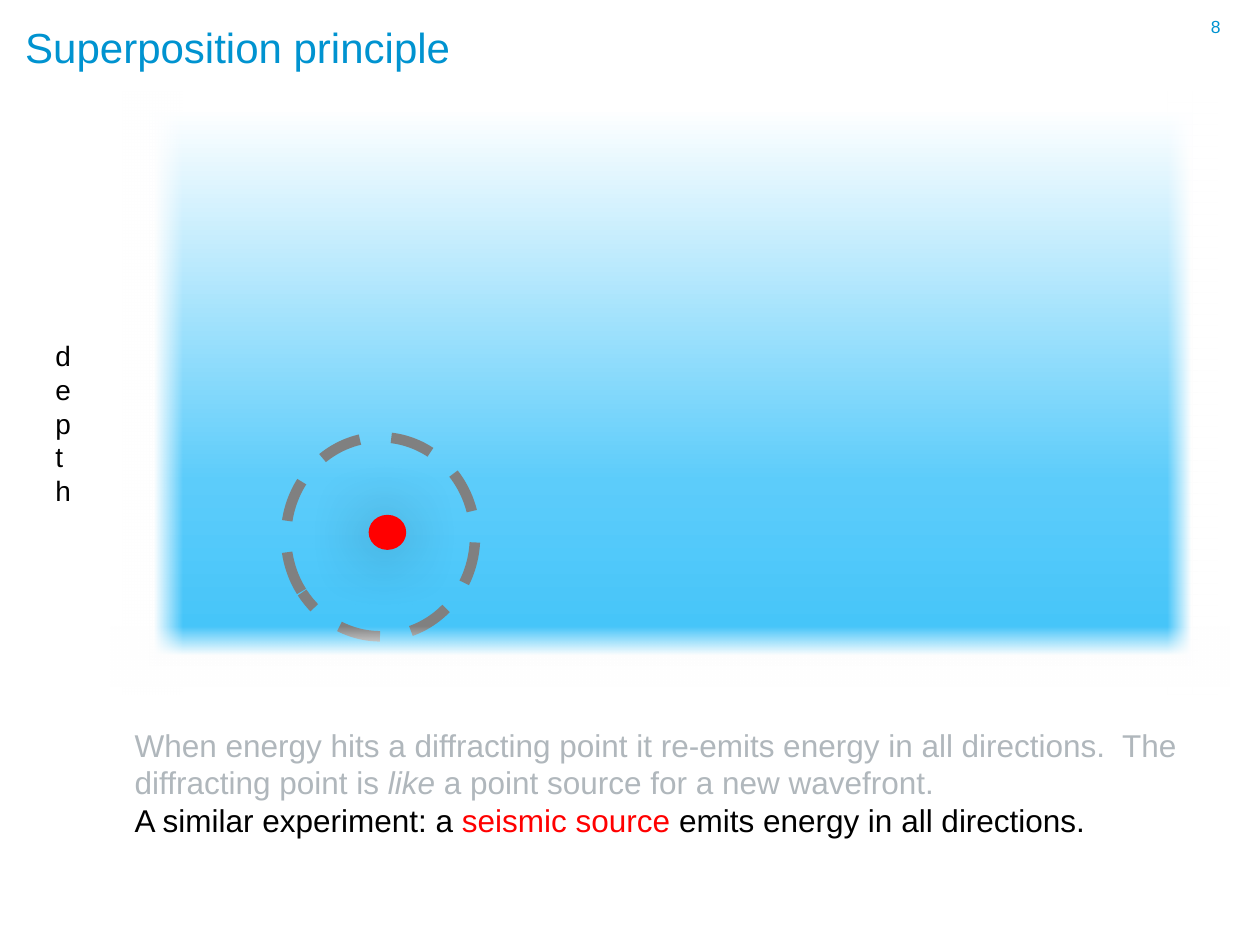
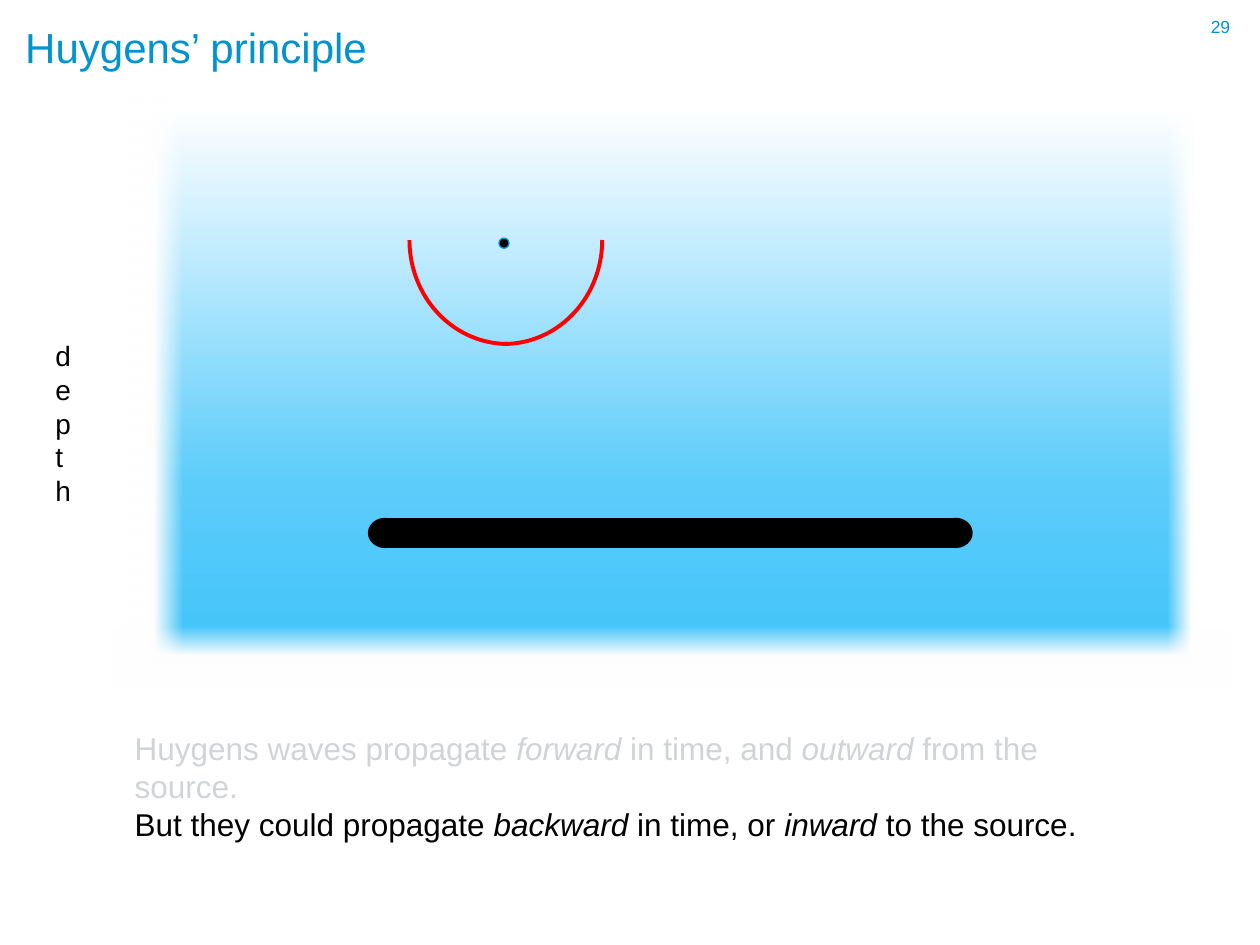
import dataclasses

import lxml.etree
import pptx
import pptx.dml.color
import pptx.enum.dml
import pptx.enum.shapes
import pptx.enum.text
import pptx.oxml.ns
import pptx.util

SHAPE = pptx.enum.shapes.MSO_SHAPE
ANCHOR = pptx.enum.text.MSO_ANCHOR
DASH = pptx.enum.dml.MSO_LINE.DASH
qn = pptx.oxml.ns.qn


@dataclasses.dataclass(frozen=True)
class Theme:
    font: str = "Arial"
    accent: str = "0093D0"
    ink: str = "000000"
    source: str = "FF0000"
    wavefront: str = "808080"
    past: str = "B0B7BC"
    faint_past: str = "D0D4D7"
    # Stops are (position in percent, colour, opacity in percent).
    water: tuple = ((0, "40C3F9", 100), (33, "5CCCFA", 100), (100, "FFFFFF", 100))
    fade: tuple = ((0, "FFFFFF", 0), (48, "FFFFFF", 100))
    title_size: int = 24
    caption_size: int = 18
    axis_size: int = 16
    number_size: int = 10


def apply_format(target, values):
    for name, value in values.items():
        setattr(target, name, value)


class Deck:
    """Draws on a grid of 100 columns by 75 rows."""

    COLUMNS, ROWS = 100, 75

    def __init__(self, theme):
        self.theme = theme
        self.file = pptx.Presentation()
        self.file.slide_width = pptx.util.Inches(10)
        self.file.slide_height = pptx.util.Inches(7.5)
        self.slide = None

    def x(self, columns):
        return round(self.file.slide_width * columns / self.COLUMNS)

    def y(self, rows):
        return round(self.file.slide_height * rows / self.ROWS)

    def box(self, left, top, width, height):
        return self.x(left), self.y(top), self.x(width), self.y(height)

    def fill_frame(self, frame, paragraphs, size, margins=None, spacing=None,
                   anchor=ANCHOR.TOP):
        """Fill a frame with paragraphs of (text, colour, italic) runs."""
        apply_format(frame, {"word_wrap": True, "vertical_anchor": anchor,
                             "auto_size": pptx.enum.text.MSO_AUTO_SIZE.NONE})
        if margins is not None:
            sides = ("left", "top", "right", "bottom")
            apply_format(frame, {f"margin_{side}": margins for side in sides})
        for index, runs in enumerate(paragraphs):
            paragraph = frame.add_paragraph() if index else frame.paragraphs[0]
            apply_format(paragraph, {"alignment": pptx.enum.text.PP_ALIGN.LEFT,
                                     "line_spacing": spacing})
            for text, colour, italic in runs:
                run = paragraph.add_run()
                run.text = text
                apply_format(run.font, {"name": self.theme.font, "italic": italic,
                                        "size": pptx.util.Pt(size)})
                run.font.color.rgb = pptx.dml.color.RGBColor.from_string(colour)

    def text(self, place, paragraphs, size, **layout):
        label = self.slide.shapes.add_textbox(*self.box(*place))
        self.fill_frame(label.text_frame, paragraphs, size, **layout)
        return label

    def start(self, title, number):
        """Add a slide with its title and page number."""
        theme = self.theme
        self.slide = self.file.slides.add_slide(self.file.slide_layouts[5])
        heading = self.slide.shapes.title
        left, top, width, height = self.box(2, 1.9, 87.3, 4.1)
        apply_format(heading, {"left": left, "top": top,
                               "width": width, "height": height})
        self.fill_frame(heading.text_frame, [[(title, theme.accent, False)]],
                        theme.title_size, margins=0, spacing=0.9,
                        anchor=ANCHOR.MIDDLE)
        self.text((96.1, 1.3, 3, 2.6), [[(str(number), theme.accent, False)]],
                  theme.number_size, margins=0, spacing=pptx.util.Pt(12))

    def outline(self, line, colour, width, dash=None):
        line.color.rgb = pptx.dml.color.RGBColor.from_string(colour)
        apply_format(line, {"width": pptx.util.Pt(width), "dash_style": dash})

    def shape(self, preset, place, fill=None, line=None):
        part = self.slide.shapes.add_shape(preset, *self.box(*place))
        part.shadow.inherit = False
        if fill:
            part.fill.solid()
            part.fill.fore_color.rgb = pptx.dml.color.RGBColor.from_string(fill)
        else:
            part.fill.background()
        if line:
            self.outline(part.line, *line)
        else:
            part.line.fill.background()
        return part

    def gradient(self, place, stops, angle):
        """Draw a rectangle whose gradient runs clockwise from the right."""
        band = self.shape(SHAPE.RECTANGLE, place)
        band.fill.gradient()
        gradient = band._element.spPr.find(qn("a:gradFill"))
        stop_list = gradient.find(qn("a:gsLst"))
        for stop in list(stop_list):
            stop_list.remove(stop)
        for position, colour, opacity in stops:
            stop = lxml.etree.SubElement(stop_list, qn("a:gs"), pos=str(position * 1000))
            tint = lxml.etree.SubElement(stop, qn("a:srgbClr"), val=colour)
            if opacity < 100:
                lxml.etree.SubElement(tint, qn("a:alpha"), val=str(opacity * 1000))
        gradient.find(qn("a:lin")).set("ang", str(angle * 60000))

    def arc(self, place, start, end, line):
        curve = self.shape(SHAPE.ARC, place, line=line)
        for index, degrees in enumerate((start, end)):
            curve.adjustments[index] = degrees * 0.6  # 60000ths over 100000

    def line(self, start, end, colour, width):
        rule = self.slide.shapes.add_connector(
            pptx.enum.shapes.MSO_CONNECTOR.STRAIGHT,
            self.x(start[0]), self.y(start[1]), self.x(end[0]), self.y(end[1]))
        self.outline(rule.line, colour, width)
        lxml.etree.SubElement(rule._element.spPr, qn("a:effectLst"))

    def soft_shadow(self, part, opacity, blur, distance, angle):
        effects = part._element.spPr.find(qn("a:effectLst"))
        shadow = lxml.etree.SubElement(
            effects, qn("a:outerShdw"), blurRad=str(int(pptx.util.Pt(blur))),
            dist=str(int(pptx.util.Pt(distance))), dir=str(angle * 60000),
            algn="ctr", rotWithShape="0")
        tint = lxml.etree.SubElement(shadow, qn("a:srgbClr"), val=self.theme.ink)
        lxml.etree.SubElement(tint, qn("a:alpha"), val=str(opacity * 1000))

    def water(self):
        self.gradient((11.8, 8.5, 83.3, 44.4), self.theme.water, 270)

    def faded_edges(self):
        for place, angle in (((9.7, 7.3, 4.8, 47.8), 180),
                             ((92.7, 7.3, 3.9, 47.8), 0),
                             ((8.8, 49.7, 88.8, 4.8), 90)):
            self.gradient(place, self.theme.fade, angle)

    def depth_axis(self):
        axis = self.text((3.4, 26.4, 4.9, 16.5), [[("depth", self.theme.ink, False)]],
                         self.theme.axis_size)
        axis.text_frame._txBody.bodyPr.set("vert", "wordArtVert")

    def caption(self, top, width, paragraphs):
        self.text((9.7, top, width, 10.1), paragraphs, self.theme.caption_size)


def superposition(deck):
    theme = deck.theme
    deck.start("Superposition principle", 8)
    deck.water()
    deck.depth_axis()
    deck.arc((22.7, 34.7, 15, 15.8), 145.29, 144.56, (theme.wavefront, 6, DASH))
    seismic_source = deck.shape(SHAPE.OVAL, (29.4, 41, 2.7, 2.5),
                                theme.source, (theme.source, 2))
    deck.soft_shadow(seismic_source, opacity=40, blur=38, distance=3, angle=135)
    deck.faded_edges()
    deck.caption(57.1, 85.9, [
        [("When energy hits a diffracting point it re-emits energy in all directions.  "
          "The diffracting point is ", theme.past, False),
         ("like", theme.past, True),
         (" a point source for a new wavefront.", theme.past, False)],
        [("A similar experiment: a ", theme.ink, False),
         ("seismic source ", theme.source, False),
         ("emits energy in all directions.", theme.ink, False)]])


def huygens(deck):
    theme = deck.theme
    deck.start("Huygens’ principle", 29)
    deck.water()
    deck.line((30.6, 42.3), (76, 42.3), theme.ink, 17.25)
    for reflector_end in (29.2, 74.5):
        deck.shape(SHAPE.OVAL, (reflector_end, 41.1, 2.7, 2.4), theme.ink)
    deck.faded_edges()
    deck.caption(57.4, 79.9, [
        [("Huygens waves propagate ", theme.faint_past, False),
         ("forward", theme.faint_past, True),
         (" in time, and ", theme.faint_past, False),
         ("outward", theme.faint_past, True),
         (" from the source.", theme.faint_past, False)],
        [("But they could propagate ", theme.ink, False),
         ("backward", theme.ink, True),
         (" in time, or ", theme.ink, False),
         ("inward", theme.ink, True),
         (" to the source.", theme.ink, False)]])
    deck.depth_axis()
    deck.shape(SHAPE.OVAL, (39.6, 18.9, 0.8, 0.8), theme.ink, (theme.accent, 0.75))
    for left, start in ((32.2, 0), (32.5, 90)):
        deck.arc((left, 10.8, 15.6, 16.5), start, start + 90, (theme.source, 2.25))


def main():
    deck = Deck(Theme())
    superposition(deck)
    huygens(deck)
    deck.file.save("out.pptx")


if __name__ == "__main__":
    main()
